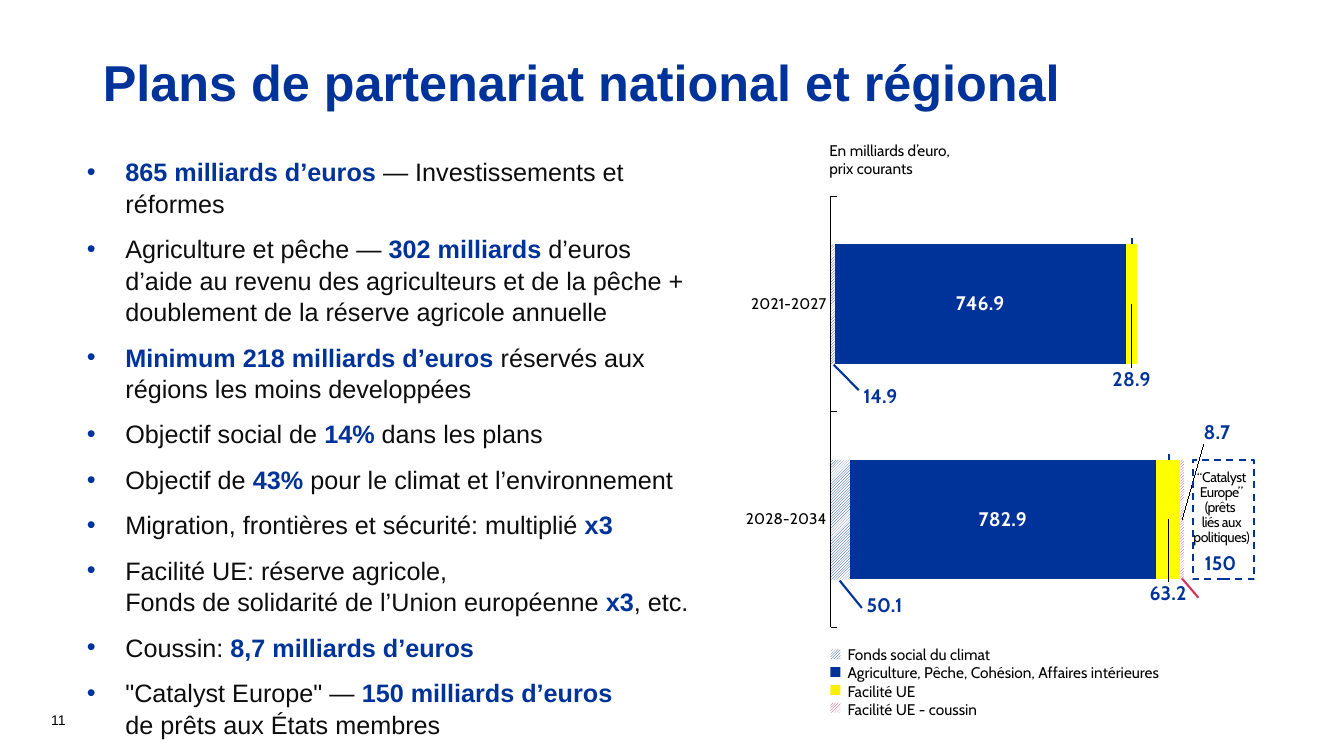
import pptx
import pptx.chart.data
import pptx.dml.color
import pptx.enum.chart
import pptx.enum.dml
import pptx.enum.shapes
import pptx.enum.text
import pptx.oxml
import pptx.oxml.ns
import pptx.util

Cm, Pt = pptx.util.Cm, pptx.util.Pt
ALIGN, ANCHOR = pptx.enum.text.PP_ALIGN, pptx.enum.text.MSO_ANCHOR
COLORS = {
    name: pptx.dml.color.RGBColor.from_string(value)
    for name, value in {
        "navy": "003399", "ink": "0D0D0D", "black": "000000", "white": "FFFFFF",
        "yellow": "FFFF00", "gold": "FFED00", "crimson": "D8315B",
    }.items()
}


def style_font(font, size, color, name="Cabin", bold=False):
    font.size, font.name, font.bold = Pt(size), name, bold
    font.color.rgb = COLORS[color]


def place(element, index, settings):
    inner = "".join(f'<c:{key} val="{value}"/>' for key, value in settings.items())
    element.insert(index, pptx.oxml.parse_xml(
        f'<c:layout {pptx.oxml.ns.nsdecls("c")}><c:manualLayout>{inner}</c:manualLayout></c:layout>'))


deck = pptx.Presentation()
deck.slide_width, deck.slide_height = Cm(33.87), Cm(19.05)
page = deck.slides.add_slide(deck.slide_layouts[1])

title = page.shapes.title
title.left, title.top, title.width, title.height = Cm(2.34), Cm(1.02), Cm(30.23), Cm(2.26)
title.text_frame.vertical_anchor = ANCHOR.MIDDLE
title.text_frame.auto_size = pptx.enum.text.MSO_AUTO_SIZE.NONE
para = title.text_frame.paragraphs[0]
para.alignment, para.line_spacing = ALIGN.LEFT, 0.9
span = para.add_run()
span.text = "Plans de partenariat national et régional"
style_font(span.font, 36, "navy", "Arial", True)

bullets = [
    "*865 milliards d’euros* — Investissements et réformes",
    "Agriculture et pêche — *302 milliards *d’euros d’aide au revenu des agriculteurs et de la pêche + doublement de la réserve agricole annuelle",
    "*Minimum 218 milliards d’euros *réservés aux régions les moins developpées",
    "Objectif social de *14% *dans les plans",
    "Objectif de *43% *pour le climat et l’environnement",
    "Migration, frontières et sécurité: multiplié *x3",
    "Facilité UE: réserve agricole, \nFonds de solidarité de l’Union européenne *x3*, etc.",
    "Coussin: *8,7 milliards d’euros",
    "\"Catalyst Europe\" — *150 milliards d’euros *\nde prêts aux États membres",
]
body = page.placeholders[1]
body.left, body.top, body.width, body.height = Cm(1.78), Cm(3.51), Cm(16.31), Cm(11.43)
frame = body.text_frame
frame.auto_size = pptx.enum.text.MSO_AUTO_SIZE.NONE
frame.margin_left = frame.margin_right = frame.margin_top = frame.margin_bottom = Cm(0.41)
for row, bullet in enumerate(bullets):
    para = frame.add_paragraph() if row else frame.paragraphs[0]
    properties = para._p.get_or_add_pPr()
    properties.set("marL", str(Cm(0.97)))
    properties.set("indent", str(-Cm(0.97)))
    for markup in (f'<a:buClr %s><a:srgbClr val="{COLORS["navy"]}"/></a:buClr>',
                   '<a:buFont %s typeface="Arial"/>', '<a:buChar %s char="•"/>'):
        properties.append(pptx.oxml.parse_xml(markup % pptx.oxml.ns.nsdecls("a")))
    para.line_spacing = 1.04
    para.space_before = Pt(10 if row else 0)
    for part, phrase in enumerate(bullet.split("*")):
        for piece, words in enumerate(phrase.split("\n")):
            if piece:
                para.add_line_break()
            if words:
                span = para.add_run()
                span.text = words
                style_font(span.font, 18, "navy" if part % 2 else "ink", "Arial", part % 2 == 1)

legend = [
    ("Fonds social du climat", "navy", "navy", True, (10, 50)),
    ("Agriculture, Pêche, Cohésion, Affaires intérieures", "navy", "navy", False, (746.9, 782.9)),
    ("Facilité UE", "yellow", "gold", False, (28.9, 63.2)),
    ("Facilité UE - coussin", "crimson", "crimson", True, (0, 8.7)),
]
data = pptx.chart.data.CategoryChartData(number_format="#,##0.0")
data.categories = ["2021-2027", "2028-2034"]
for name, *_, values in legend:
    data.add_series(name, values)
chart = page.shapes.add_chart(pptx.enum.chart.XL_CHART_TYPE.BAR_STACKED,
                              Cm(16.43), Cm(3.1), Cm(15.98), Cm(15.93), data).chart
chart.has_legend = chart.has_title = False
style_font(chart.font, 10, "black")
plot = chart.plots[0]
plot.gap_width, plot.overlap, plot.vary_by_categories = 80, 100, False
periods, amounts = chart.category_axis, chart.value_axis
periods.reverse_order = True
periods.major_tick_mark = pptx.enum.chart.XL_TICK_MARK.INSIDE
periods.format.line.color.rgb, periods.format.line.width = COLORS["black"], Pt(0.75)
style_font(periods.tick_labels.font, 11, "black")
amounts.minimum_scale, amounts.maximum_scale = 0, 1100
amounts.has_major_gridlines = amounts.visible = False
area = chart._chartSpace.xpath(".//c:plotArea")[0]
for layout in area.xpath("./c:layout"):
    area.remove(layout)
place(area, 0, {"layoutTarget": "inner", "xMode": "edge", "yMode": "edge",
                "x": 0.282, "y": 0.116, "w": 0.677, "h": 0.682})

fills = []
for row, (series, (name, bar_color, key_color, hatched, values)) in enumerate(zip(plot.series, legend)):
    swatch = page.shapes.add_shape(pptx.enum.shapes.MSO_SHAPE.RECTANGLE,
                                   Cm(20.93), Cm(16.36 + 0.45 * row), Cm(0.25), Cm(0.25))
    swatch.shadow.inherit = False
    swatch.line.fill.background()
    fills += [(series.format.fill, bar_color, hatched), (swatch.fill, key_color, hatched)]
for fill, color, hatched in fills:
    if hatched:
        fill.patterned()
        fill.pattern = pptx.enum.dml.MSO_PATTERN.DARK_UPWARD_DIAGONAL
        fill.fore_color.rgb, fill.back_color.rgb = COLORS[color], COLORS["white"]
    else:
        fill.solid()
        fill.fore_color.rgb = COLORS[color]

center = pptx.enum.chart.XL_LABEL_POSITION.CENTER
labels = plot.series[1].data_labels
labels.show_value, labels.position = True, center
labels.number_format, labels.number_format_is_linked = "#,##0.0", False
style_font(labels.font, 14, "white", bold=True)
for series_index, point_index, x, y in [(2, 0, 0, 0.12), (2, 1, 0, 0.117), (3, 1, 0.055, -0.138)]:
    series = plot.series[series_index]
    label = series.points[point_index].data_label
    style_font(label.font, 14, "navy", bold=True)
    label.position = center
    place(series._element.xpath(f".//c:dLbl[c:idx/@val={point_index}]")[0], 1, {"x": x, "y": y})
    series.data_labels.show_value = False

catalyst = page.shapes.add_shape(pptx.enum.shapes.MSO_SHAPE.RECTANGLE,
                                 Cm(30.06), Cm(11.6), Cm(1.55), Cm(3))
catalyst.shadow.inherit = False
catalyst.fill.background()
catalyst.line.color.rgb, catalyst.line.width = COLORS["navy"], Pt(1.25)
catalyst.line.dash_style = pptx.enum.dml.MSO_LINE.DASH
frame = catalyst.text_frame
frame.word_wrap, frame.vertical_anchor = True, ANCHOR.TOP
frame.margin_left, frame.margin_right, frame.margin_top, frame.margin_bottom = 0, Cm(0.1), Cm(0.25), 0
para = frame.paragraphs[0]
para.alignment, para.line_spacing = ALIGN.CENTER, 0.9
for words, size in [("“", 9), ("Catalyst Europe”", 10), ("\n", 10), ("(prêts ", 10),
                    ("\n", 10), ("liés aux politiques)", 10)]:
    if words == "\n":
        para.add_line_break()
        continue
    span = para.add_run()
    span.text = words
    style_font(span.font, size, "black")
    span.font._element.set("spc", "-30")

for x1, y1, x2, y2, color in [
    (21.01, 9.19, 21.64, 9.83, "navy"), (21.16, 14.63, 21.72, 15.32, "navy"),
    (29.79, 14.58, 30.2, 15.06, "crimson"), (29.46, 11.43, 29.46, 11.58, "navy"),
    (28.52, 5.99, 28.52, 6.15, "navy"),
]:
    leader = page.shapes.add_connector(pptx.enum.shapes.MSO_CONNECTOR.STRAIGHT,
                                       Cm(x1), Cm(y1), Cm(x2), Cm(y2))
    leader.line.color.rgb, leader.line.width = COLORS[color], Pt(1.5)
    leader._element.spPr.append(pptx.oxml.parse_xml(f'<a:effectLst {pptx.oxml.ns.nsdecls("a")}/>'))

value_style = (14, "navy", "Cabin", True)
note_style = (11, "black", "Cabin", False)
for lines, position, style, align, anchor in [
    (["11"], (1.04, 17.45, 7.62, 1.02), (10, "black", "Arial", False), ALIGN.LEFT, ANCHOR.BOTTOM),
    (["150"], (29.92, 13.84, 1.68, 0.66), value_style, ALIGN.CENTER, ANCHOR.MIDDLE),
    (["50.1"], (21.59, 14.81, 2.51, 0.86), value_style, ALIGN.LEFT, ANCHOR.TOP),
    (["14.9"], (21.51, 9.55, 1.85, 0.86), value_style, ALIGN.LEFT, ANCHOR.TOP),
    (["En milliards d’euro, prix courants"], (20.65, 3.43, 4.04, 1.35), note_style, ALIGN.LEFT, ANCHOR.TOP),
    ([entry[0] for entry in legend], (21.11, 16.13, 10.24, 2.13), note_style, ALIGN.LEFT, ANCHOR.TOP),
]:
    box = page.shapes.add_textbox(*map(Cm, position))
    frame = box.text_frame
    frame.word_wrap, frame.vertical_anchor = True, anchor
    for row, words in enumerate(lines):
        para = frame.add_paragraph() if row else frame.paragraphs[0]
        para.alignment = align
        span = para.add_run()
        span.text = words
        style_font(span.font, *style)

deck.save("out.pptx")
